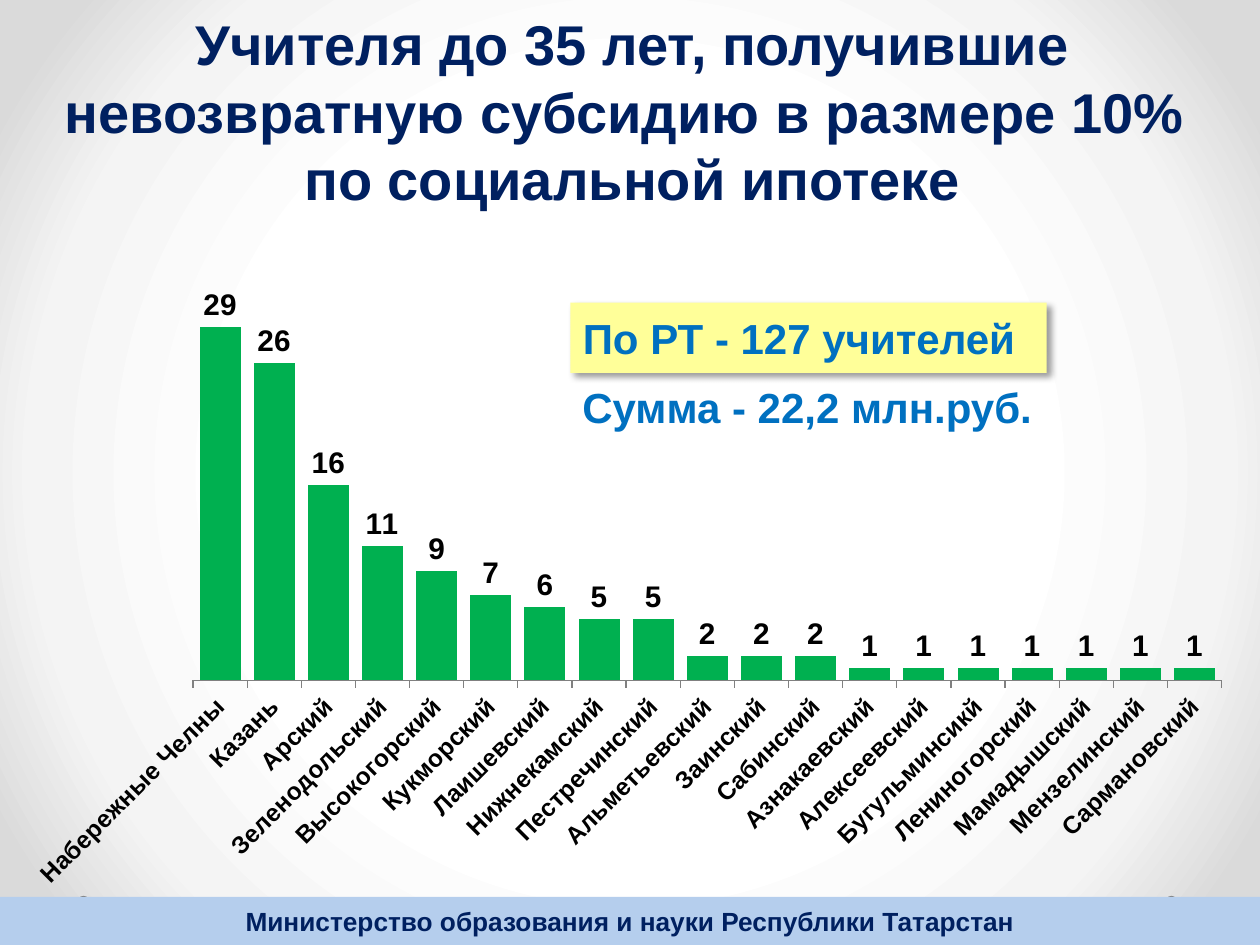
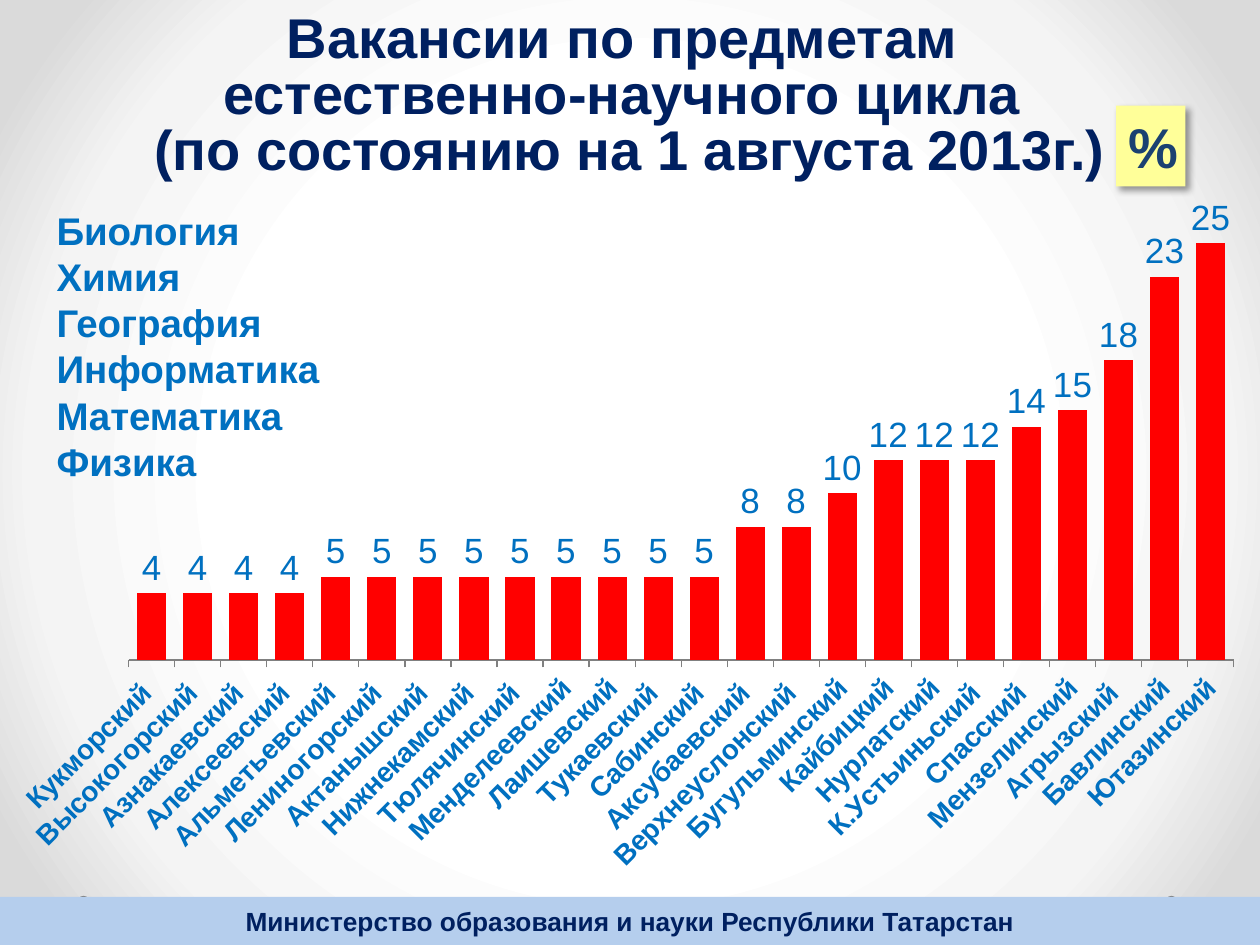
from lxml import etree
from pptx import Presentation
from pptx.chart.data import CategoryChartData
from pptx.dml.color import RGBColor
from pptx.enum.chart import XL_CHART_TYPE, XL_LABEL_POSITION, XL_TICK_MARK
from pptx.enum.shapes import MSO_SHAPE
from pptx.enum.text import MSO_ANCHOR, MSO_AUTO_SIZE, PP_ALIGN
from pptx.oxml import parse_xml
from pptx.oxml.ns import nsdecls, qn
from pptx.util import Cm, Pt

CENTER, LEFT = PP_ALIGN.CENTER, PP_ALIGN.LEFT
TOP, MIDDLE = MSO_ANCHOR.TOP, MSO_ANCHOR.MIDDLE
RECTANGLE, OVAL = MSO_SHAPE.RECTANGLE, MSO_SHAPE.OVAL
COLUMNS = XL_CHART_TYPE.COLUMN_CLUSTERED
OUTSIDE_END = XL_LABEL_POSITION.OUTSIDE_END
TICK_OUTSIDE, TICK_NONE = XL_TICK_MARK.OUTSIDE, XL_TICK_MARK.NONE

FONT = "Arial"
NAVY = RGBColor(0x00, 0x20, 0x60)
BLUE = RGBColor(0x00, 0x70, 0xC0)
DARK_BLUE = RGBColor(0x1B, 0x41, 0x71)
BAND_BLUE = RGBColor(0xB5, 0xCE, 0xED)
YELLOW = RGBColor(0xFF, 0xFF, 0x99)
GREEN = RGBColor(0x00, 0xB0, 0x50)
RED = RGBColor(0xFF, 0x00, 0x00)
GRAY = RGBColor(0x80, 0x80, 0x80)
BLACK = RGBColor(0x00, 0x00, 0x00)
BACKDROP_STOPS = [(50, "FFFFFF"), (76, "F4F4F4"), (92, "DADADA")]

FOOTER = "Министерство образования и науки Республики Татарстан"
FOOTER_BOX = (0, 18.08, 25.4, 0.99)
DOT_BOXES = [(23.5, 18.06, 0.23, 0.23), (1.57, 18.06, 0.23, 0.23)]

SUBSIDY_TITLE = [
    "Учителя до 35 лет, получившие невозвратную субсидию в размере 10% \vпо социальной ипотеке"
]
SUBSIDY_TOTAL = "По РТ - 127 учителей"
SUBSIDY_SUM = "Сумма - 22,2 млн.руб."
SUBSIDY_CHART = {
    "box": (0.7, 4.72, 24, 13.41),
    "plot": (0.132, 0.029, 0.865, 0.642),
    "maximum": 35,
    "gap": 32,
    "bar_color": GREEN,
    "axis_size": 14,
    "label_size": 17,
    "label_bold": True,
    "text_color": BLACK,
    "format": "General",
    "points": [
        ("Набережные Челны", 29), ("Казань", 26), ("Арский", 16),
        ("Зеленодольский", 11), ("Высокогорский", 9), ("Кукморский", 7),
        ("Лаишевский", 6), ("Нижнекамский", 5), ("Пестречинский", 5),
        ("Альметьевский", 2), ("Заинский", 2), ("Сабинский", 2),
        ("Азнакаевский", 1), ("Алексеевский", 1), ("Бугульминсикй", 1),
        ("Лениногорский", 1), ("Мамадышский", 1), ("Мензелинский", 1),
        ("Сармановский", 1),
    ],
}

VACANCY_TITLE = [
    "Вакансии по предметам ",
    "естественно-научного цикла ",
    "(по состоянию на 1 августа 2013г.)",
]
SUBJECTS = ["Биология", "Химия", "География Информатика", "Математика", "Физика"]
VACANCY_CHART = {
    "box": (0.41, 3.12, 24.61, 15.6),
    "plot": (0.088, 0.007, 0.906, 0.646),
    "maximum": 0.3,
    "gap": 58,
    "bar_color": RED,
    "axis_size": 16,
    "label_size": 20,
    "label_bold": False,
    "text_color": BLUE,
    "format": "0%",
    "points": [
        ("Кукморский ", 0.04), ("Высокогорский ", 0.04), ("Азнакаевский ", 0.04),
        ("Алексеевский ", 0.04), ("Альметьевский ", 0.05), ("Лениногорский ", 0.05),
        ("Актанышский ", 0.05), ("Нижнекамский ", 0.05), ("Тюлячинский ", 0.05),
        ("Менделеевский", 0.05), ("Лаишевский", 0.05), ("Тукаевский ", 0.05),
        ("Сабинский ", 0.05), ("Аксубаевский ", 0.08), ("Верхнеуслонский ", 0.08),
        ("Бугульминский", 0.1), ("Кайбицкий", 0.12), ("Нурлатский", 0.12),
        ("К.Устьиньский ", 0.12), ("Спасский ", 0.14), ("Мензелинский", 0.15),
        ("Агрызский ", 0.18), ("Бавлинский", 0.23), ("Ютазинский", 0.25),
    ],
}


def in_cm(box):
    return [Cm(length) for length in box]


def set_font(font, size, color, bold=True):
    font.name = FONT
    font.size = Pt(size)
    font.bold = bold
    font.color.rgb = color


def write(shape, lines, size, color, align=LEFT, anchor=TOP, spacing=1.0, margin=0.2):
    frame = shape.text_frame
    frame.text = "\n".join(lines)
    frame.word_wrap = True
    frame.auto_size = MSO_AUTO_SIZE.NONE
    frame.vertical_anchor = anchor
    frame.margin_left = frame.margin_right = Cm(0.25)
    frame.margin_top = frame.margin_bottom = Cm(margin)
    for paragraph in frame.paragraphs:
        paragraph.alignment = align
        paragraph.line_spacing = spacing
        paragraph.space_before = Pt(0)
        set_font(paragraph.font, size, color)


def place(shape, box):
    shape.left, shape.top, shape.width, shape.height = in_cm(box)


def add_filled(slide, preset, box, color):
    shape = slide.shapes.add_shape(preset, *in_cm(box))
    shape.shadow.inherit = False
    shape.fill.solid()
    shape.fill.fore_color.rgb = color
    shape.line.fill.background()
    return shape


def add_callout(slide, box, text, size, color, margin):
    shape = add_filled(slide, RECTANGLE, box, YELLOW)
    write(shape, [text], size, color, margin=margin)
    effects = shape._element.spPr.find(qn("a:effectLst"))
    effects.append(parse_xml(
        f'<a:outerShdw {nsdecls("a")} blurRad="50800" dist="38100" dir="2700000" '
        'algn="tl" rotWithShape="0"><a:srgbClr val="000000">'
        '<a:alpha val="40000"/></a:srgbClr></a:outerShdw>'))


def add_title(slide, box, lines, **style):
    place(slide.shapes.title, box)
    write(slide.shapes.title, lines, 32, NAVY, CENTER, **style)


def add_column_chart(slide, design):
    names, values = zip(*design["points"])
    data = CategoryChartData(number_format=design["format"])
    data.categories = names
    data.add_series("Series 1", values)
    chart = slide.shapes.add_chart(COLUMNS, *in_cm(design["box"]), data).chart
    chart.has_title = False
    chart.has_legend = False
    set_font(chart.font, design["axis_size"], design["text_color"])

    value_axis = chart.value_axis
    value_axis.visible = False
    value_axis.has_major_gridlines = False
    value_axis.minimum_scale = 0
    value_axis.maximum_scale = design["maximum"]

    category_axis = chart.category_axis
    category_axis.major_tick_mark = TICK_OUTSIDE
    category_axis.minor_tick_mark = TICK_NONE
    category_axis.format.line.color.rgb = GRAY
    set_font(category_axis.tick_labels.font, design["axis_size"], design["text_color"])

    plot = chart.plots[0]
    plot.gap_width = design["gap"]
    plot.vary_by_categories = False
    series = plot.series[0]
    series.format.fill.solid()
    series.format.fill.fore_color.rgb = design["bar_color"]
    label_style = (design["label_size"], design["text_color"], design["label_bold"])
    labels = series.data_labels
    labels.show_value = True
    labels.position = OUTSIDE_END
    set_font(labels.font, *label_style)
    if design["format"] == "0%":
        for index, value in enumerate(values):
            label = series.points[index].data_label
            label.text_frame.text = str(round(value * 100))
            set_font(label.text_frame.paragraphs[0].font, *label_style)
            label.position = OUTSIDE_END

    plot_area = chart._chartSpace.chart.plotArea
    for layout in plot_area.findall(qn("c:layout")):
        plot_area.remove(layout)
    layout = etree.Element(qn("c:layout"))
    manual = etree.SubElement(layout, qn("c:manualLayout"))
    settings = [("layoutTarget", "inner"), ("xMode", "edge"), ("yMode", "edge")]
    for tag, value in settings + list(zip("xywh", design["plot"])):
        etree.SubElement(manual, qn(f"c:{tag}")).set("val", str(value))
    plot_area.insert(0, layout)


def style_master(master, slide):
    master.background.fill.solid()
    background = master._element.find(".//" + qn("p:bgPr"))
    stops = "".join(
        f'<a:gs pos="{position * 1000}"><a:srgbClr val="{color}"/></a:gs>'
        for position, color in BACKDROP_STOPS)
    background.replace(background.find(qn("a:solidFill")), parse_xml(
        f'<a:gradFill {nsdecls("a")} rotWithShape="1"><a:gsLst>{stops}</a:gsLst>'
        '<a:path path="circle"><a:fillToRect l="50000" t="50000" r="50000" b="50000"/>'
        '</a:path></a:gradFill>'))
    parts = [add_filled(slide, OVAL, box, GRAY) for box in DOT_BOXES]
    band = add_filled(slide, RECTANGLE, FOOTER_BOX, BAND_BLUE)
    write(band, [FOOTER], 15, NAVY, CENTER, MIDDLE, margin=0.13)
    for number, shape in enumerate(parts + [band], start=101):
        shape._element.nvSpPr.cNvPr.set("id", str(number))
        master.shapes._spTree.append(shape._element)


def build_subsidy_slide(slide):
    add_title(slide, (0.1, 0, 25.3, 4.5), SUBSIDY_TITLE)
    add_column_chart(slide, SUBSIDY_CHART)
    add_callout(slide, (11.5, 6.1, 9.6, 1.42), SUBSIDY_TOTAL, 24, BLUE, 0.2)
    sum_box = slide.shapes.add_textbox(*in_cm((11.49, 7.49, 9.6, 1.42)))
    write(sum_box, [SUBSIDY_SUM], 24, BLUE)


def build_vacancy_slide(slide):
    add_column_chart(slide, VACANCY_CHART)
    add_title(slide, (2.5, 0.05, 20.4, 3.84), VACANCY_TITLE, anchor=MIDDLE, spacing=Pt(32))
    add_callout(slide, (22.5, 2.13, 1.4, 1.63), "%", 32, DARK_BLUE, 0.13)
    subject_list = slide.placeholders[1]
    place(subject_list, (0.89, 4.04, 7.59, 5.89))
    write(subject_list, SUBJECTS, 22, BLUE, margin=0.13)
    for paragraph in subject_list.text_frame.paragraphs:
        properties = paragraph._p.get_or_add_pPr()
        properties.set("marL", "0")
        properties.set("indent", "0")
        bullet = parse_xml(f'<a:buNone {nsdecls("a")}/>')
        properties.find(qn("a:defRPr")).addprevious(bullet)


def main():
    presentation = Presentation()
    presentation.slide_width, presentation.slide_height = Cm(25.4), Cm(19.05)
    layouts = presentation.slide_layouts
    subsidy_slide = presentation.slides.add_slide(layouts.get_by_name("Title Only"))
    vacancy_slide = presentation.slides.add_slide(layouts.get_by_name("Title and Content"))
    style_master(presentation.slide_master, subsidy_slide)
    build_subsidy_slide(subsidy_slide)
    build_vacancy_slide(vacancy_slide)
    presentation.save("out.pptx")


if __name__ == "__main__":
    main()
